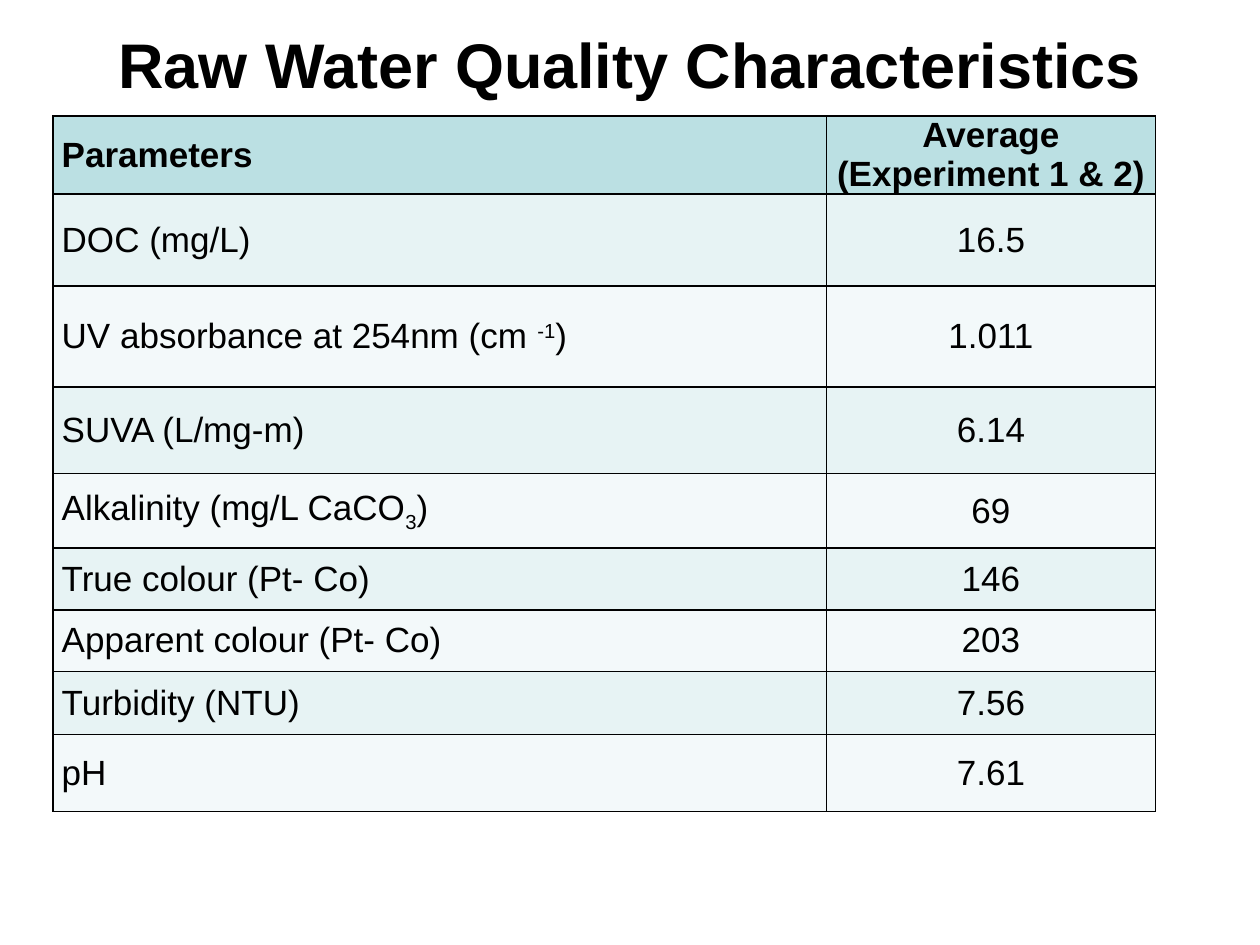
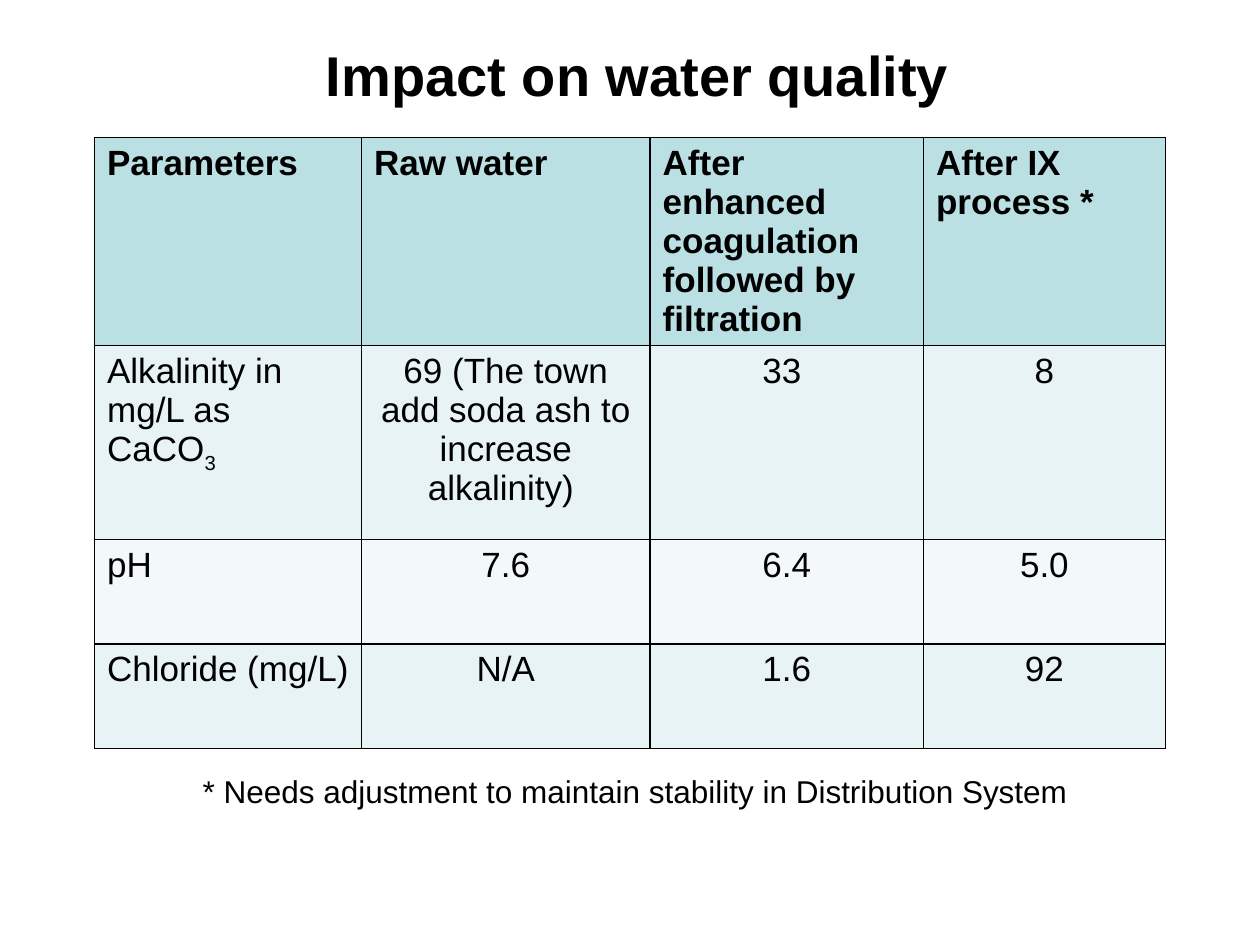
from lxml.etree import SubElement
from pptx import Presentation
from pptx.dml.color import RGBColor
from pptx.enum.text import MSO_ANCHOR as Anchor, MSO_AUTO_SIZE as AutoSize, PP_ALIGN as Align
from pptx.oxml.ns import qn
from pptx.util import Inches, Pt

GRID_COLUMNS, GRID_ROWS = 10, 7.5
SLIDE_WIDTH, SLIDE_HEIGHT = Inches(10), Inches(7.5)
TITLE_ONLY_LAYOUT = 5
FONT_NAME = "Arial"
BLACK, HEADER_FILL = "000000", "BBE0E3"
BODY_FILLS = ("E7F3F4", "F3F9FA")
BODY_SIZE, NOTE_SIZE = 20, 18
SUPERSCRIPT, SUBSCRIPT = 30, -25

RAW_WATER_ROWS = [
    ["Parameters", "Average (Experiment 1 & 2)"],
    ["DOC (mg/L)", "16.5"],
    [["UV absorbance at 254nm (cm ", ("-1", SUPERSCRIPT), ")"], "1.011"],
    ["SUVA (L/mg-m)", "6.14"],
    [["Alkalinity (mg/L CaCO", ("3", SUBSCRIPT), ")"], "69"],
    ["True colour (Pt- Co)", "146"],
    ["Apparent colour (Pt- Co)", "203"],
    ["Turbidity (NTU)", "7.56"],
    ["pH", "7.61"],
]
IMPACT_ROWS = [
    ["Parameters", "Raw water", "After enhanced coagulation followed by filtration",
     "After IX process *"],
    [["Alkalinity in mg/L as CaCO", ("3", SUBSCRIPT)],
     "69 (The town add soda ash to increase alkalinity) ", "33 ", "8"],
    ["pH", "7.6", "6.4", "5.0"],
    ["Chloride (mg/L)", "N/A", "1.6", "92"],
]


def across(columns):
    return round(SLIDE_WIDTH * columns / GRID_COLUMNS)


def down(rows):
    return round(SLIDE_HEIGHT * rows / GRID_ROWS)


def grid_box(left, top, width, height):
    return across(left), down(top), across(width), down(height)


def color(hex_string):
    return RGBColor.from_string(hex_string)


def format_runs(paragraph, size, bold=False):
    for run in paragraph.runs:
        run.font.name = FONT_NAME
        run.font.size = Pt(size)
        run.font.bold = bold
        run.font.color.rgb = color(BLACK)


def write_parts(paragraph, parts):
    for part in [parts] if isinstance(parts, str) else parts:
        text, baseline = (part, 0) if isinstance(part, str) else part
        run = paragraph.add_run()
        run.text = text
        if baseline:
            run._r.get_or_add_rPr().set("baseline", str(baseline * 1000))


def add_titled_slide(presentation, text, box, size):
    slide = presentation.slides.add_slide(presentation.slide_layouts[TITLE_ONLY_LAYOUT])
    title = slide.shapes.title
    title.left, title.top, title.width, title.height = grid_box(*box)
    frame = title.text_frame
    frame.text = text
    frame.auto_size = AutoSize.NONE
    frame.vertical_anchor = Anchor.MIDDLE
    frame.paragraphs[0].alignment = Align.CENTER
    format_runs(frame.paragraphs[0], size, bold=True)
    return slide


def add_borders(cell):
    properties = cell._tc.get_or_add_tcPr()
    for side in ("lnL", "lnR", "lnT", "lnB"):
        line = SubElement(properties, qn(f"a:{side}"), w=str(Pt(1)))
        fill = SubElement(line, qn("a:solidFill"))
        SubElement(fill, qn("a:srgbClr"), val=BLACK)


def fill_cell(cell, parts, fill, bold, centred):
    add_borders(cell)
    cell.fill.solid()
    cell.fill.fore_color.rgb = color(fill)
    paragraph = cell.text_frame.paragraphs[0]
    write_parts(paragraph, parts)
    paragraph.alignment = Align.CENTER if centred else Align.LEFT
    format_runs(paragraph, BODY_SIZE, bold)


def add_data_table(slide, contents, left, top, widths, heights, centre_header, compact):
    box = grid_box(left, top, sum(widths), sum(heights))
    table = slide.shapes.add_table(len(heights), len(widths), *box).table
    for column, width in zip(table.columns, widths):
        column.width = across(width)
    for row_index, (row, height) in enumerate(zip(table.rows, heights)):
        row.height = down(height)
        is_header = row_index == 0
        fill = HEADER_FILL if is_header else BODY_FILLS[(row_index - 1) % 2]
        for column_index, cell in enumerate(row.cells):
            centred = column_index > 0 and (centre_header or not is_header)
            fill_cell(cell, contents[row_index][column_index], fill, is_header, centred)
            if compact:
                cell.vertical_anchor = Anchor.MIDDLE
                cell.margin_left = cell.margin_right = Inches(0.07)
                cell.margin_top = cell.margin_bottom = 0


def add_footnote(slide, text, box):
    frame = slide.shapes.add_textbox(*grid_box(*box)).text_frame
    frame.word_wrap = True
    frame.text = text
    format_runs(frame.paragraphs[0], NOTE_SIZE)


def main():
    presentation = Presentation()
    presentation.slide_width, presentation.slide_height = SLIDE_WIDTH, SLIDE_HEIGHT

    raw_water = add_titled_slide(
        presentation, "Raw Water Quality Characteristics", (0, 0, 10, 1), 36)
    add_data_table(raw_water, RAW_WATER_ROWS, 0.42, 0.92, [6.14, 2.61],
                   [0.62, 0.73, 0.8, 0.69, 0.59, 0.49, 0.49, 0.5, 0.61],
                   centre_header=True, compact=True)

    impact = add_titled_slide(
        presentation, "Impact on water quality", (-0.19, 0.25, 10.5, 0.67), 32)
    add_data_table(impact, IMPACT_ROWS, 0.75, 1.09, [2.12, 2.29, 2.17, 1.92],
                   [1.65, 1.54, 0.83, 0.83], centre_header=False, compact=False)
    add_footnote(impact, "* Needs adjustment to maintain stability in Distribution System",
                 (1.51, 6.08, 7.41, 0.5))

    presentation.save("out.pptx")


if __name__ == "__main__":
    main()
